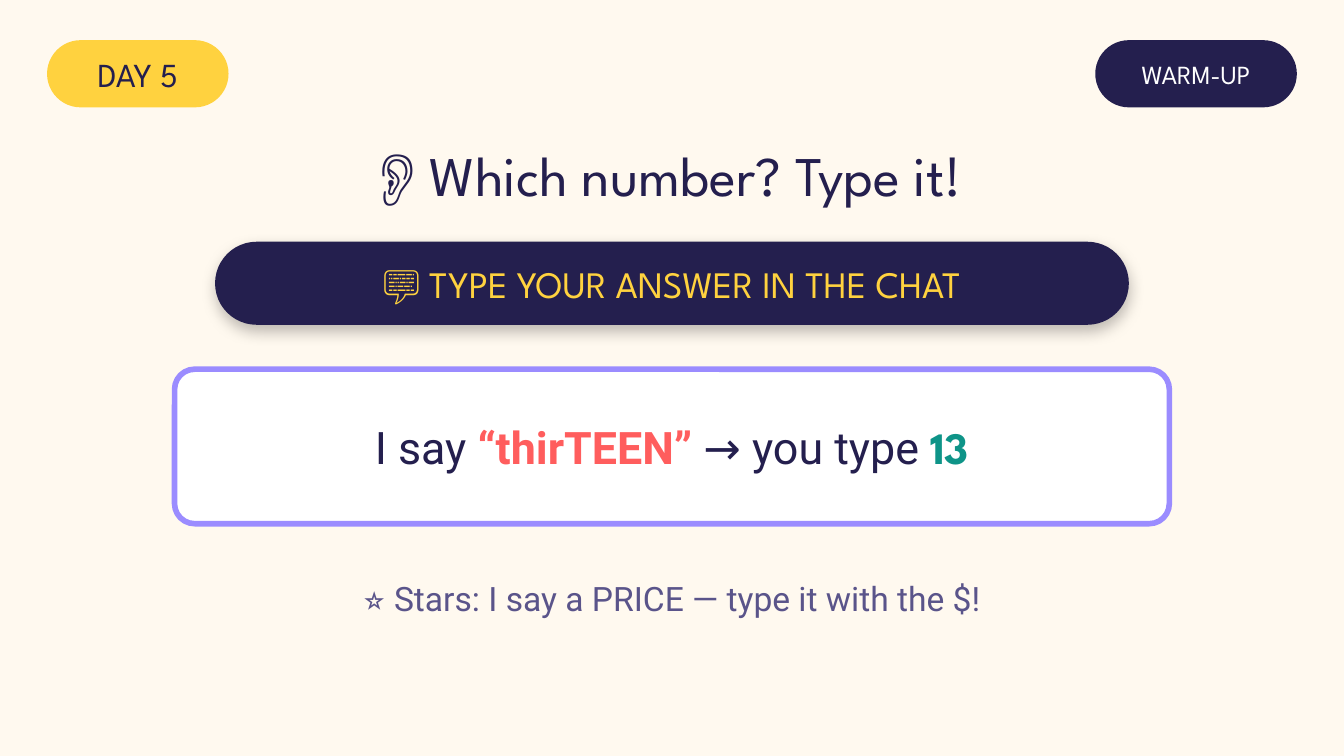
from dataclasses import dataclass

from lxml import etree
from pptx import Presentation
from pptx.dml.color import RGBColor
from pptx.enum.shapes import MSO_SHAPE
from pptx.enum.text import MSO_ANCHOR, PP_ALIGN
from pptx.oxml.ns import qn
from pptx.util import Cm, Pt

ROUND = MSO_SHAPE.ROUNDED_RECTANGLE
MIDDLE = MSO_ANCHOR.MIDDLE
CENTER = PP_ALIGN.CENTER
WIDTH, HEIGHT = 25.4, 14.29


@dataclass(frozen=True)
class Theme:
    """Colours, fonts and type sizes of the slide."""
    cream: str = "FFF9EF"
    navy: str = "241F4E"
    yellow: str = "FFD23F"
    white: str = "FFFFFF"
    violet: str = "9B8CFF"
    coral: str = "FF5D5D"
    teal: str = "0E9488"
    muted: str = "5A548A"
    head: str = "League Spartan"
    body: str = "Roboto"
    title: int = 30
    main: int = 24
    call: int = 20
    note: int = 18
    tag: int = 14


class Board:
    """Holds the theme and the current slide."""

    def __init__(self, theme, slide):
        """Set the theme, the slide and its background."""
        self.theme = theme
        self.slide = slide
        fill = slide.background.fill
        fill.solid()
        fill.fore_color.rgb = RGBColor.from_string(theme.cream)

    def letter(self, shape, size, parts):
        """Fill a shape with one centred line of (text, font, colour, bold) parts."""
        frame = shape.text_frame
        frame.word_wrap = True
        frame.vertical_anchor = MIDDLE
        frame.margin_left = frame.margin_right = 0
        frame.margin_top = frame.margin_bottom = 0
        line = frame.paragraphs[0]
        line.alignment = CENTER
        for text, face, color, bold in parts:
            run = line.add_run()
            run.text = text
            run.font.name = face
            run.font.size = Pt(size)
            run.font.bold = bold
            run.font.color.rgb = RGBColor.from_string(color)

    def label(self, top, height, size, text, face, color):
        """Add a line of text across the slide."""
        box = self.slide.shapes.add_textbox(0, Cm(top), Cm(WIDTH), Cm(height))
        self.letter(box, size, [(text, face, color, False)])

    def panel(self, left, top, width, height, fill, size, parts, curve=0.5, edge=None):
        """Add a rounded panel with text and return it."""
        shape = self.slide.shapes.add_shape(
            ROUND, Cm(left), Cm(top), Cm(width), Cm(height))
        shape.adjustments[0] = curve
        shape.shadow.inherit = False
        shape.fill.solid()
        shape.fill.fore_color.rgb = RGBColor.from_string(fill)
        if edge:
            shape.line.color.rgb = RGBColor.from_string(edge)
            shape.line.width = Pt(3)
        else:
            shape.line.fill.background()
        self.letter(shape, size, parts)
        return shape

    def shade(self, shape):
        """Give a shape a soft shadow below it."""
        effect = shape.element.spPr.find(qn("a:effectLst"))
        outer = etree.SubElement(
            effect, qn("a:outerShdw"), blurRad=str(Pt(8)), dist=str(Pt(3)),
            dir="5400000", algn="bl", rotWithShape="0")
        color = etree.SubElement(outer, qn("a:srgbClr"), val="000000")
        etree.SubElement(color, qn("a:alpha"), val="25000")


def main():
    """Build and save the warm-up slide."""
    deck = Presentation()
    deck.slide_width, deck.slide_height = Cm(WIDTH), Cm(HEIGHT)
    look = Theme()
    board = Board(look, deck.slides.add_slide(deck.slide_layouts[6]))

    edge, top, high = 0.89, 0.76, 1.27
    board.panel(edge, top, 3.43, high, look.yellow, look.note,
                [("DAY 5", look.head, look.navy, False)])
    wide = 3.81
    board.panel(WIDTH - edge - wide, top, wide, high, look.navy, look.tag,
                [("WARM-UP", look.head, look.white, False)])

    board.label(2.41, 1.78, look.title, "👂 Which number? Type it!",
                look.head, look.navy)

    wide = 17.27
    call = board.panel((WIDTH - wide) / 2, 4.57, wide, 1.57, look.navy, look.call,
                       [("💬 TYPE YOUR ANSWER IN THE CHAT",
                         look.head, look.yellow, False)])
    board.shade(call)

    wide = 18.8
    board.panel((WIDTH - wide) / 2, 6.98, wide, 2.92, look.white, look.main, [
        ("I say ", look.body, look.navy, False),
        ("“thirTEEN”", look.body, look.coral, True),
        (" → you type ", look.body, look.navy, False),
        ("13", look.head, look.teal, True),
    ], curve=0.13, edge=look.violet)

    board.label(10.67, 1.27, look.note,
                "⭐ Stars: I say a PRICE — type it with the $!",
                look.body, look.muted)
    deck.save("out.pptx")


if __name__ == "__main__":
    main()
